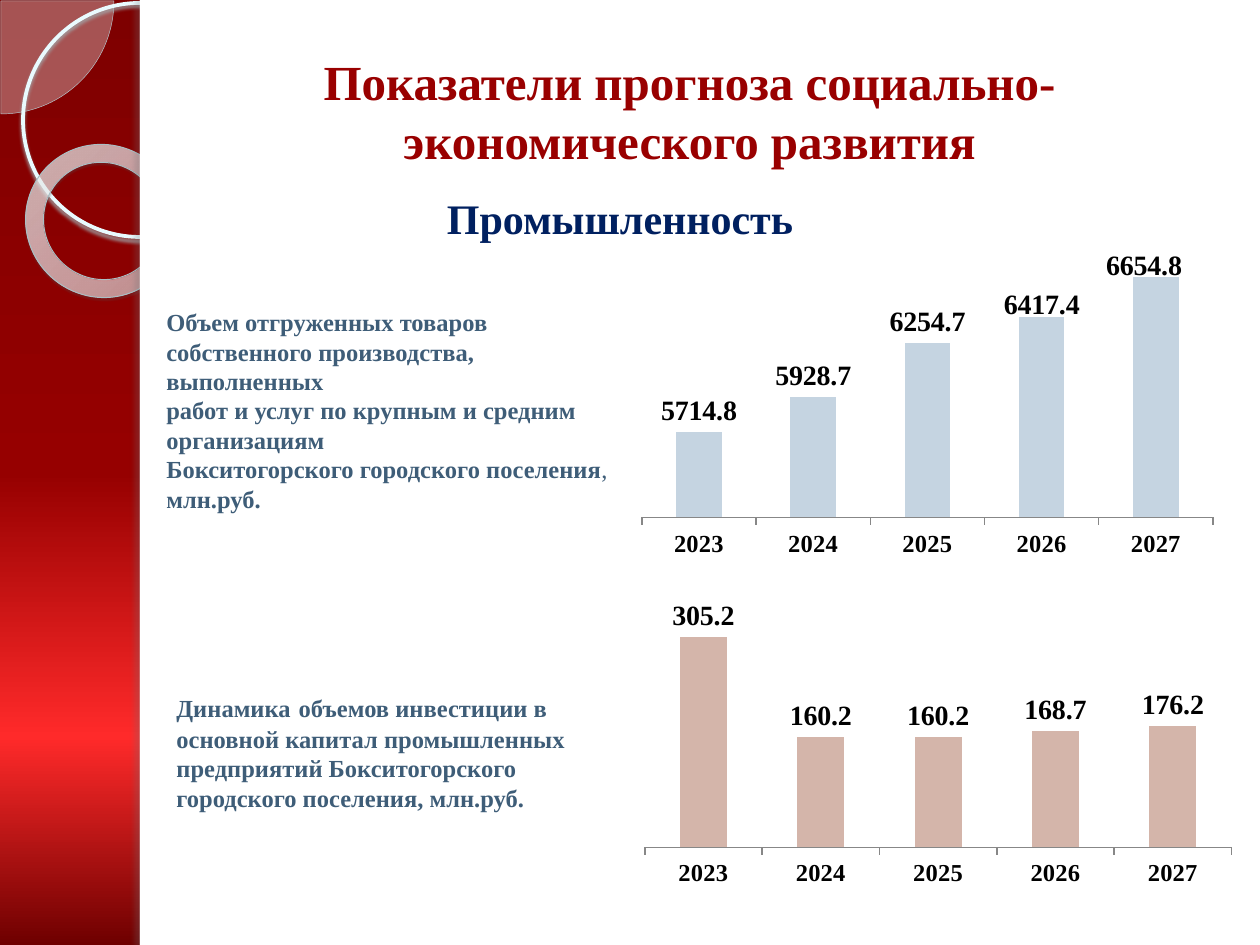
from copy import deepcopy

from lxml.etree import SubElement
from pptx import Presentation
from pptx.chart.data import CategoryChartData
from pptx.dml.color import RGBColor
from pptx.enum.chart import XL_CHART_TYPE, XL_LABEL_POSITION, XL_TICK_MARK
from pptx.enum.shapes import MSO_SHAPE
from pptx.enum.text import MSO_ANCHOR, PP_ALIGN
from pptx.oxml.ns import qn
from pptx.util import Emu, Pt

FONT = "Times New Roman"
COLORS = {
    "title": "990000", "heading": "002060", "text": "3E5D78", "black": "000000",
    "white": "FFFFFF", "axis": "878787", "output": "C5D4E1", "invest": "D4B5AA",
    "pie": "F8FCFD", "pie_line": "B7CBD1", "ring": "E9FAFE", "donut_line": "AABFC4",
}
BACKGROUND = [(0, "7E0000", 100), (50, "960000", 96), (78, "FF2A2A", 100), (100, "6E0000", 100)]
DONUT = [(0, "F9FDFE", 70), (70, "FCFEFF", 55), (100, "B1D8E2", 60)]
YEARS = ["2023", "2024", "2025", "2026", "2027"]


def px(n):
    return Emu(round(n * 914400 / 126))


def box(*lengths):
    return [px(n) for n in lengths]


def rgb(name):
    return RGBColor.from_string(COLORS[name])


def add(parent, tag, **attrs):
    return SubElement(parent, qn(tag), {k: str(v) for k, v in attrs.items()})


def set_gradient(fill, element, stops, circle=None):
    """Linear downward gradient, or a circular one with a fill-to rectangle."""
    fill.gradient()
    grad = element.find(".//" + qn("a:gradFill"))
    for child in list(grad):
        grad.remove(child)
    gs_list = add(grad, "a:gsLst")
    for pos, color, alpha in stops:
        gs = add(gs_list, "a:gs", pos=pos * 1000)
        add(add(gs, "a:srgbClr", val=color), "a:alpha", val=alpha * 1000)
    if circle:
        rect = {side: n * 1000 for side, n in zip("ltrb", circle)}
        add(add(grad, "a:path", path="circle"), "a:fillToRect", **rect)
    else:
        add(grad, "a:lin", ang=90 * 60000, scaled=0)


def add_shape(slide, kind, at, fill=None, alpha=100, line=None, width=1, shadow=None):
    sp = slide.shapes.add_shape(kind, *box(*at))
    sp.shadow.inherit = False
    if fill:
        sp.fill.solid()
        sp.fill.fore_color.rgb = rgb(fill)
        clr = sp._element.spPr.find(qn("a:solidFill"))[0]
        if alpha < 100:
            add(clr, "a:alpha", val=alpha * 1000)
    else:
        sp.fill.background()
    if line:
        sp.line.color.rgb = rgb(line)
        sp.line.width = Pt(width)
    else:
        sp.line.fill.background()
    if shadow:
        color, opacity, blur, dist, angle = shadow
        outer = add(sp._element.spPr.find(qn("a:effectLst")), "a:outerShdw",
                    blurRad=Pt(blur), dist=Pt(dist), dir=angle * 60000, rotWithShape=0)
        add(add(outer, "a:srgbClr", val=color), "a:alpha", val=opacity * 1000)
    return sp


def add_run(p, text, size=14, color="text", bold=True):
    """Add text to a paragraph; each newline becomes a line break."""
    for i, part in enumerate(text.split("\n")):
        if i:
            p.add_line_break()
            p._p[-1].append(deepcopy(r._r.rPr))
        r = p.add_run()
        r.text = part
        r.font.name, r.font.size, r.font.bold = FONT, Pt(size), bold
        r.font.color.rgb = rgb(color)


def add_text(slide, at, runs):
    sp = slide.shapes.add_textbox(*box(*at))
    tf = sp.text_frame
    tf.word_wrap = True
    for text, fmt in runs:
        add_run(tf.paragraphs[0], text, **fmt)
    return tf


def set_font(font, size):
    font.name, font.size, font.bold = FONT, Pt(size), True
    font.color.rgb = rgb("black")


def add_layout(parent, **values):
    layout = add(add(parent, "c:layout"), "c:manualLayout")
    for tag, val in values.items():
        add(layout, "c:" + tag, val=val)
    return layout.getparent()


def add_columns(slide, at, values, color, plot, limits, axis_width, shifts=None):
    data = CategoryChartData()
    data.categories = YEARS
    data.add_series("Series 1", values)
    chart = slide.shapes.add_chart(XL_CHART_TYPE.COLUMN_CLUSTERED, *box(*at), data).chart
    chart.has_legend = chart.has_title = False
    set_font(chart.font, 16)

    # Axes
    axis = chart.category_axis
    axis.major_tick_mark = XL_TICK_MARK.OUTSIDE
    axis.format.line.color.rgb = rgb("axis")
    axis.format.line.width = Pt(axis_width)
    set_font(axis.tick_labels.font, 14)
    val_axis = chart.value_axis
    val_axis.visible = val_axis.has_major_gridlines = False
    val_axis.minimum_scale, val_axis.maximum_scale = limits

    # Columns and labels
    bars = chart.plots[0]
    bars.gap_width, bars.vary_by_categories = 150, False
    series = bars.series[0]
    series.format.fill.solid()
    series.format.fill.fore_color.rgb = rgb(color)
    labels = series.data_labels
    labels.show_value = True
    labels.position = XL_LABEL_POSITION.OUTSIDE_END
    set_font(labels.font, 16)
    for i, (dx, dy) in (shifts or {}).items():
        label = series.points[i].data_label
        set_font(label.font, 16)
        label.position = XL_LABEL_POSITION.OUTSIDE_END
        d_lbl = labels._element.findall(qn("c:dLbl"))[-1]
        d_lbl.find(qn("c:idx")).addnext(add_layout(d_lbl, x=dx, y=dy))

    # Inner plot area
    area = chart._chartSpace.chart.plotArea
    for old in area.findall(qn("c:layout")):
        area.remove(old)
    x, y, w, h = plot
    area.insert(0, add_layout(area, layoutTarget="inner", xMode="edge", yMode="edge",
                              x=x, y=y, w=w, h=h))


def add_decor(slide):
    pie = add_shape(slide, MSO_SHAPE.PIE, (-112, -112, 226, 226), "pie", 33, "pie_line", 0.25)
    pie.adjustments[0], pie.adjustments[1] = 0, 54
    add_shape(slide, MSO_SHAPE.OVAL, (23, 3, 234, 234), line="ring", width=2.15,
              shadow=("A1AEB1", 85, 2, 2, 90))
    donut = add_shape(slide, MSO_SHAPE.DONUT, (25, 145, 155, 152), line="donut_line",
                      width=0.58, shadow=("4E5759", 35, 1, 1.2, 75))
    donut.adjustments[0] = 0.118
    donut.rotation = 38.6
    set_gradient(donut.fill, donut._element.spPr, DONUT, circle=(-408, -50, 508, 150))
    add_shape(slide, MSO_SHAPE.RECTANGLE, (140, 0, 1120, 945), "white")
    add_shape(slide, MSO_SHAPE.RECTANGLE, (140, 0, 10, 945), "white",
              shadow=("6D7476", 25, 3, 3, 180))


def add_title(slide, text):
    title = slide.shapes.title
    title.left, title.top, title.width, title.height = box(154, 45, 1071, 131)
    p = title.text_frame.paragraphs[0]
    p.alignment = PP_ALIGN.CENTER
    add_run(p, text, size=28, color="title")
    slide.shapes._spTree.append(title._element)  # in front of the white panel


def main():
    prs = Presentation()
    prs.slide_width, prs.slide_height = box(1260, 945)
    slide = prs.slides.add_slide(prs.slide_layouts[5])
    set_gradient(slide.background.fill, slide._element, BACKGROUND)
    add_decor(slide)

    # Captions of the two charts
    add_text(slide, (154, 301, 476, 221), [
        ("Объем отгруженных товаров собственного производства, выполненных\n"
         "работ и услуг по крупным и средним организациям\n"
         "Бокситогорского городского поселения", {}),
        (", ", {"bold": False}),
        ("млн.руб.", {})])
    add_text(slide, (164, 680, 436, 140), [
        ("Динамика", {}), (" ", {"size": 18}),
        ("объемов инвестиции в основной капитал промышленных предприятий "
         "Бокситогорского городского поселения, млн.руб.", {})])

    # Charts
    add_columns(slide, (630, 244, 595, 318), [5714.8, 5928.7, 6254.7, 6417.4, 6654.8],
                "output", (0.02, 0.03, 0.96, 0.83), (5200, 6800), 0.75,
                shifts={3: (0, 0.03), 4: (-0.02, 0.03)})
    add_columns(slide, (630, 601, 617, 307), [305.2, 160.2, 160.2, 168.7, 176.2],
                "invest", (0.024, 0, 0.951, 0.802), (0, 355), 1)

    # Headings
    tf = add_text(slide, (382, 185, 476, 59),
                  [("Промышленность", {"size": 24, "color": "heading"})])
    tf.vertical_anchor, tf.margin_bottom = MSO_ANCHOR.BOTTOM, 0
    tf.paragraphs[0].alignment = PP_ALIGN.CENTER
    tf.paragraphs[0].line_spacing = 0.9
    add_title(slide, "Показатели прогноза социально-экономического развития")

    prs.save("out.pptx")


if __name__ == "__main__":
    main()
